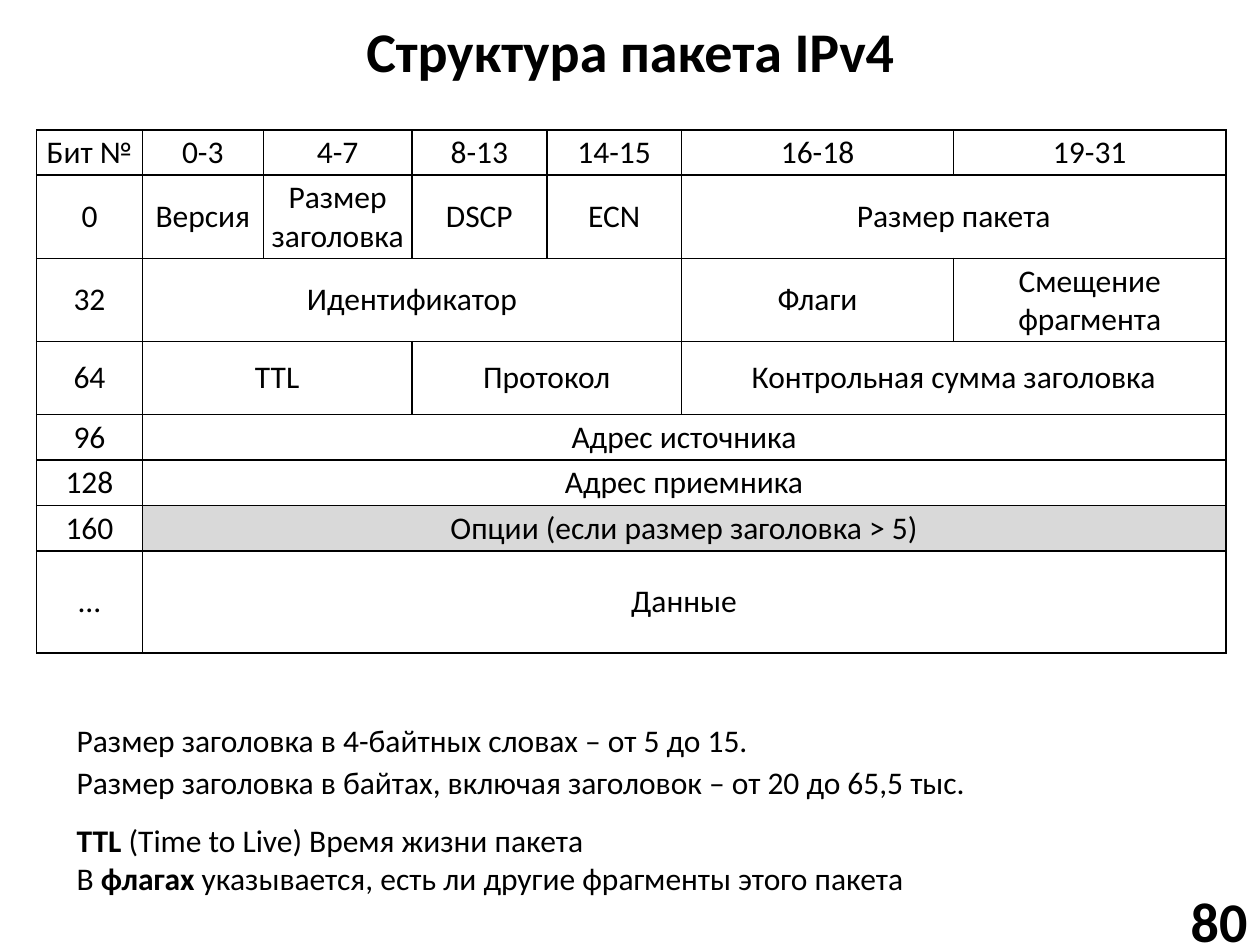
import pptx
import pptx.util
import pptx.dml.color
import pptx.enum.text
import pptx.oxml
import pptx.oxml.ns
from pptx.util import Inches

THEME = {
    "font": "Calibri", "heading": 32, "body": 18, "border": 1,
    "ink": "000000", "paper": "FFFFFF", "optional": "D9D9D9",
}
ALIGN = pptx.enum.text.PP_ALIGN
ANCHOR = pptx.enum.text.MSO_ANCHOR

TITLE = "Структура пакета IPv4"
PAGE_NUMBER = "80"
BIT_WIDTHS = [0.84, 0.96, 1.18, 1.07, 1.07, 2.16, 2.16]
PACKET_ROWS = [
    (0.24, [("Бит №", 1), ("0-3", 1), ("4-7", 1), ("8-13", 1), ("14-15", 1), ("16-18", 1), ("19-31", 1)]),
    (0.58, [("0", 1), ("Версия", 1), ("Размер заголовка", 1), ("DSCP", 1), ("ECN", 1), ("Размер пакета", 2)]),
    (0.58, [("32", 1), ("Идентификатор", 4), ("Флаги", 1), ("Смещение фрагмента", 1)]),
    (0.58, [("64", 1), ("TTL", 2), ("Протокол", 2), ("Контрольная сумма заголовка", 2)]),
    (0.31, [("96", 1), ("Адрес источника", 6)]),
    (0.31, [("128", 1), ("Адрес приемника", 6)]),
    (0.31, [("160", 1), ("Опции (если размер заголовка > 5)", 6)]),
    (0.81, [("...", 1), ("Данные", 6)]),
]
OPTIONAL_FIELD = "Опции (если размер заголовка > 5)"
NOTES = [
    ((0.51, 6.47, 8.92, 0.71), True, [
        [("TTL", True), (" (Time to Live) Время жизни пакета", False)],
        [("В ", False), ("флагах", True), (" указывается, есть ли другие фрагменты этого пакета", False)],
    ]),
    ((0.51, 5.67, 5.59, 0.4), False, [[("Размер заголовка в 4-байтных словах – от 5 до 15.", False)]]),
    ((0.51, 6.01, 7.34, 0.4), False,
     [[("Размер заголовка в байтах, включая заголовок – от 20 до 65,5 тыс.", False)]]),
]


def color(key):
    return pptx.dml.color.RGBColor.from_string(THEME[key])


def write(frame, text, size="body", bold=False, align=ALIGN.LEFT):
    lines = [[(text, bold)]] if isinstance(text, str) else text
    for index, line in enumerate(lines):
        paragraph = frame.add_paragraph() if index else frame.paragraphs[0]
        paragraph.alignment = align
        for words, strong in line:
            run = paragraph.add_run()
            run.text = words
            run.font.name = THEME["font"]
            run.font.size = pptx.util.Pt(THEME[size])
            run.font.bold = strong
            run.font.color.rgb = color("ink")


def add_text(slide, box, text, wrap=True, anchor=ANCHOR.TOP, **style):
    frame = slide.shapes.add_textbox(*map(Inches, box)).text_frame
    frame.word_wrap = wrap
    frame.vertical_anchor = anchor
    write(frame, text, **style)


def style_cell(cell, fill):
    cell.vertical_anchor = ANCHOR.MIDDLE
    cell.margin_left = cell.margin_right = Inches(0.06)
    cell.margin_top = cell.margin_bottom = Inches(0.03)
    properties = cell._tc.get_or_add_tcPr()
    for side in "LRTB":
        properties.append(pptx.oxml.parse_xml(
            f'<a:ln{side} {pptx.oxml.ns.nsdecls("a")} w="{pptx.util.Pt(THEME["border"])}">'
            f'<a:solidFill><a:srgbClr val="{THEME["ink"]}"/></a:solidFill></a:ln{side}>'))
    cell.fill.solid()
    cell.fill.fore_color.rgb = color(fill)


def add_packet(slide):
    heights = [height for height, fields in PACKET_ROWS]
    packet = slide.shapes.add_table(
        len(heights), len(BIT_WIDTHS), Inches(0.29), Inches(1.03),
        Inches(sum(BIT_WIDTHS)), Inches(sum(heights))).table
    packet.first_row = packet.horz_banding = False
    for column, width in zip(packet.columns, BIT_WIDTHS):
        column.width = Inches(width)
    for row, (height, fields) in enumerate(PACKET_ROWS):
        packet.rows[row].height = Inches(height)
        start = 0
        for label, span in fields:
            fill = "optional" if label == OPTIONAL_FIELD else "paper"
            for column in range(start, start + span):
                style_cell(packet.cell(row, column), fill)
            field = packet.cell(row, start)
            if span > 1:
                field.merge(packet.cell(row, start + span - 1))
            write(field.text_frame, label, align=ALIGN.CENTER)
            start += span


def main():
    """Build the IPv4 packet structure slide."""
    deck = pptx.Presentation()
    deck.slide_width, deck.slide_height = Inches(10), Inches(7.5)
    slide = deck.slides.add_slide(deck.slide_layouts[6])
    heading = {"size": "heading", "bold": True, "anchor": ANCHOR.MIDDLE}
    add_text(slide, (0.28, 0.05, 9.45, 0.69), TITLE, align=ALIGN.CENTER, **heading)
    add_text(slide, (8.86, 7.1, 1.14, 0.4), PAGE_NUMBER, align=ALIGN.RIGHT, **heading)
    add_packet(slide)
    for box, wrap, lines in NOTES:
        add_text(slide, box, lines, wrap=wrap)
    deck.save("out.pptx")


if __name__ == "__main__":
    main()
